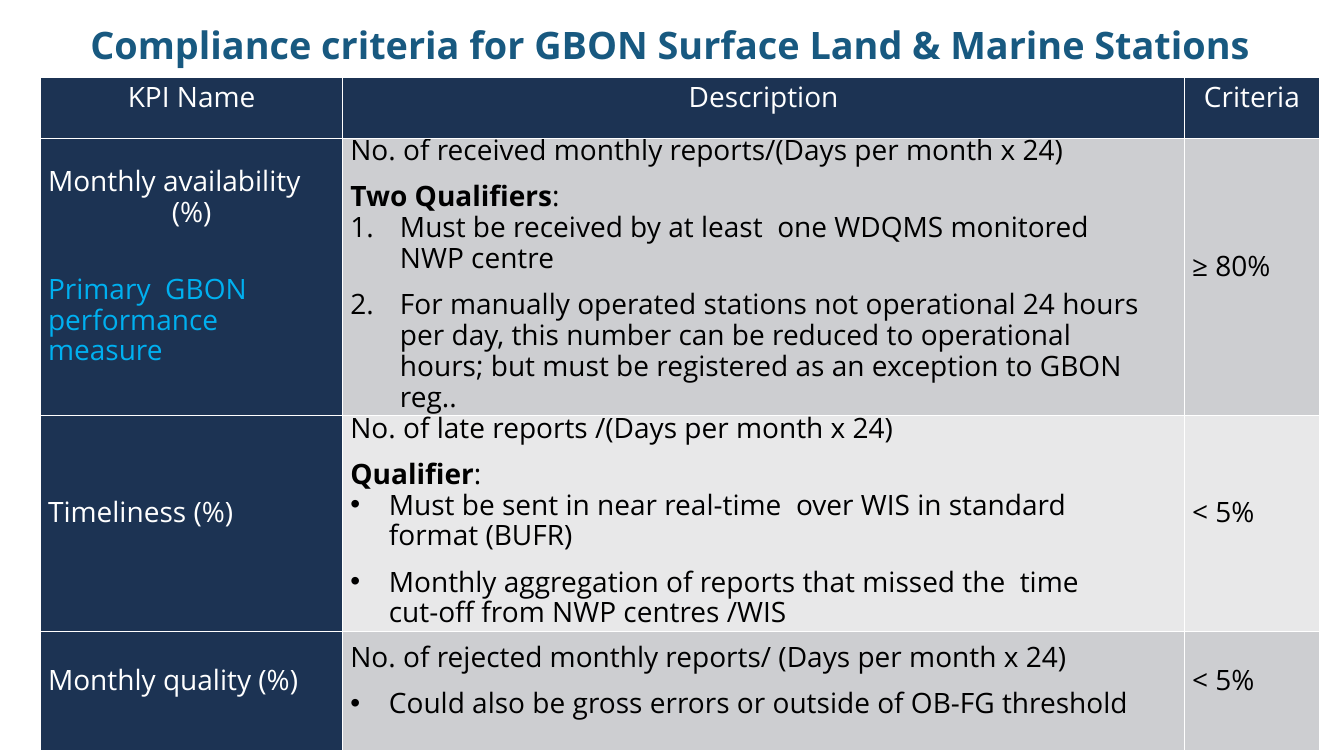
from dataclasses import dataclass

from lxml import etree
from pptx import Presentation
from pptx import util as u
from pptx.dml import color
from pptx.enum import text
from pptx.oxml import ns


@dataclass(frozen=True)
class Theme:
    font: str = "Open Sans"
    title_size: int = 27
    body_size: int = 20
    half_line: int = 11
    full_line: int = 22
    title: str = "185980"
    navy: str = "1C3353"
    white: str = "FFFFFF"
    black: str = "000000"
    accent: str = "00B0F0"
    dark_band: str = "CDCED1"
    light_band: str = "E8E8E9"


THEME = Theme()


@dataclass(frozen=True)
class Line:
    """One paragraph; pitch and gaps are in points, the label is bold."""
    words: str
    label: str = ""
    pitch: int = THEME.full_line
    before: float = 0
    after: float = 0
    centred: bool = False
    bullet: str = ""
    ink: str = ""


@dataclass(frozen=True)
class Kpi:
    name: list[Line]
    description: list[Line]
    criterion: str
    band: str
    height: float


def single(words: str) -> list[Line]:
    return [Line(words, pitch=THEME.half_line)]


def heading(words: str) -> list[Line]:
    return [Line(words, pitch=THEME.half_line, before=6.2, after=6.2, centred=True)]


GAP = THEME.half_line
HEADINGS = ["KPI Name", "Description", "Criteria"]
COLUMN_WIDTHS = [7.62, 21.21, 3.4]
HEADING_HEIGHT = 1.52
HANGING = {"number": 1.25, "dot": 0.97}

KPIS = [
    Kpi(
        single("Monthly availability") + [
            Line("(%)", centred=True),
            Line("Primary  GBON\vperformance\vmeasure", before=3 * GAP, ink=THEME.accent),
        ],
        [
            Line("No. of received monthly reports/(Days per month x 24)"),
            Line(":", label="Two Qualifiers", before=GAP),
            Line("Must be received by at least  one WDQMS monitored\vNWP centre",
                 bullet="number"),
            Line("For manually operated stations not operational 24 hours\v"
                 "per day, this number can be reduced to operational\v"
                 "hours; but must be registered as an exception to GBON reg..",
                 before=GAP, bullet="number"),
        ],
        "≥ 80%", THEME.dark_band, 6.83),
    Kpi(
        single("Timeliness (%)"),
        [
            Line("No. of late reports /(Days per month x 24)"),
            Line(":", label="Qualifier", before=GAP),
            Line("Must be sent in near real-time  over WIS in standard\vformat (BUFR)",
                 bullet="dot"),
            Line("Monthly aggregation of reports that missed the  time\v"
                 "cut-off from NWP centres /WIS", before=GAP, bullet="dot"),
        ],
        "< 5%", THEME.light_band, 5.44),
    Kpi(
        single("Monthly quality (%)"),
        single("No. of rejected monthly reports/ (Days per month x 24)") + [
            Line("Could also be gross errors or outside of OB-FG threshold",
                 before=GAP, bullet="dot"),
        ],
        "< 5%", THEME.dark_band, 3.02),
]


def style_run(run, size: int, ink: str, bold: bool = False) -> None:
    run.font.name = THEME.font
    run.font.size = u.Pt(size)
    run.font.bold = bold
    run.font.color.rgb = color.RGBColor.from_string(ink)


def add_bullet(paragraph, kind: str) -> None:
    properties = paragraph._p.get_or_add_pPr()
    indent = u.Cm(HANGING[kind])
    properties.set("marL", str(indent))
    properties.set("indent", str(-indent))
    if kind == "number":
        etree.SubElement(properties, ns.qn("a:buFont"), typeface="+mj-lt")
        etree.SubElement(properties, ns.qn("a:buAutoNum"), type="arabicPeriod")
    else:
        etree.SubElement(properties, ns.qn("a:buFont"), typeface="Arial")
        etree.SubElement(properties, ns.qn("a:buChar"), char="•")


def write_line(paragraph, line: Line, ink: str) -> None:
    paragraph.text = line.label or line.words
    if line.label:
        paragraph.add_run().text = line.words
    for index, run in enumerate(paragraph.runs):
        style_run(run, THEME.body_size, line.ink or ink, bool(line.label) and index == 0)
    paragraph.alignment = text.PP_ALIGN.CENTER if line.centred else text.PP_ALIGN.LEFT
    paragraph.line_spacing = u.Pt(line.pitch)
    paragraph.space_before = u.Pt(line.before)
    paragraph.space_after = u.Pt(line.after)
    if line.bullet:
        add_bullet(paragraph, line.bullet)


def fill_cell(cell, lines: list[Line], fill: str, ink: str) -> None:
    cell.vertical_anchor = text.MSO_ANCHOR.MIDDLE
    cell.margin_left = cell.margin_right = u.Cm(0.19)
    cell.margin_top = cell.margin_bottom = 0
    # White rules on every side
    properties = cell._tc.get_or_add_tcPr()
    for side in ("lnL", "lnR", "lnT", "lnB"):
        rule = etree.SubElement(properties, ns.qn(f"a:{side}"), w=str(u.Pt(1)))
        solid = etree.SubElement(rule, ns.qn("a:solidFill"))
        etree.SubElement(solid, ns.qn("a:srgbClr"), val=THEME.white)
    cell.fill.solid()
    cell.fill.fore_color.rgb = color.RGBColor.from_string(fill)
    frame = cell.text_frame
    for index, line in enumerate(lines):
        write_line(frame.add_paragraph() if index else frame.paragraphs[0], line, ink)


def add_title(slide) -> None:
    box = slide.shapes.add_textbox(u.Cm(2.03), 0, u.Cm(30.18), u.Cm(2.26))
    frame = box.text_frame
    frame.word_wrap = True
    frame.vertical_anchor = text.MSO_ANCHOR.MIDDLE
    frame.text = "Compliance criteria for GBON Surface Land & Marine Stations"
    style_run(frame.paragraphs[0].runs[0], THEME.title_size, THEME.title, bold=True)


def add_kpi_table(slide) -> None:
    heights = [HEADING_HEIGHT] + [kpi.height for kpi in KPIS]
    table = slide.shapes.add_table(
        len(heights), len(COLUMN_WIDTHS), u.Cm(1.02), u.Cm(1.96),
        u.Cm(sum(COLUMN_WIDTHS)), u.Cm(sum(heights))).table
    table.first_row = table.horz_banding = False
    for column, width in zip(table.columns, COLUMN_WIDTHS):
        column.width = u.Cm(width)
    for row, height in zip(table.rows, heights):
        row.height = u.Cm(height)

    # Heading row
    for column, words in enumerate(HEADINGS):
        fill_cell(table.cell(0, column), heading(words), THEME.navy, THEME.white)

    # One row per indicator
    for row, kpi in enumerate(KPIS, start=1):
        fill_cell(table.cell(row, 0), kpi.name, THEME.navy, THEME.white)
        fill_cell(table.cell(row, 1), kpi.description, kpi.band, THEME.black)
        fill_cell(table.cell(row, 2), single(kpi.criterion), kpi.band, THEME.black)


def main() -> None:
    deck = Presentation()
    deck.slide_width, deck.slide_height = u.Cm(33.87), u.Cm(19.05)
    slide = deck.slides.add_slide(deck.slide_layouts[6])
    add_title(slide)
    add_kpi_table(slide)
    deck.save("out.pptx")


if __name__ == "__main__":
    main()
